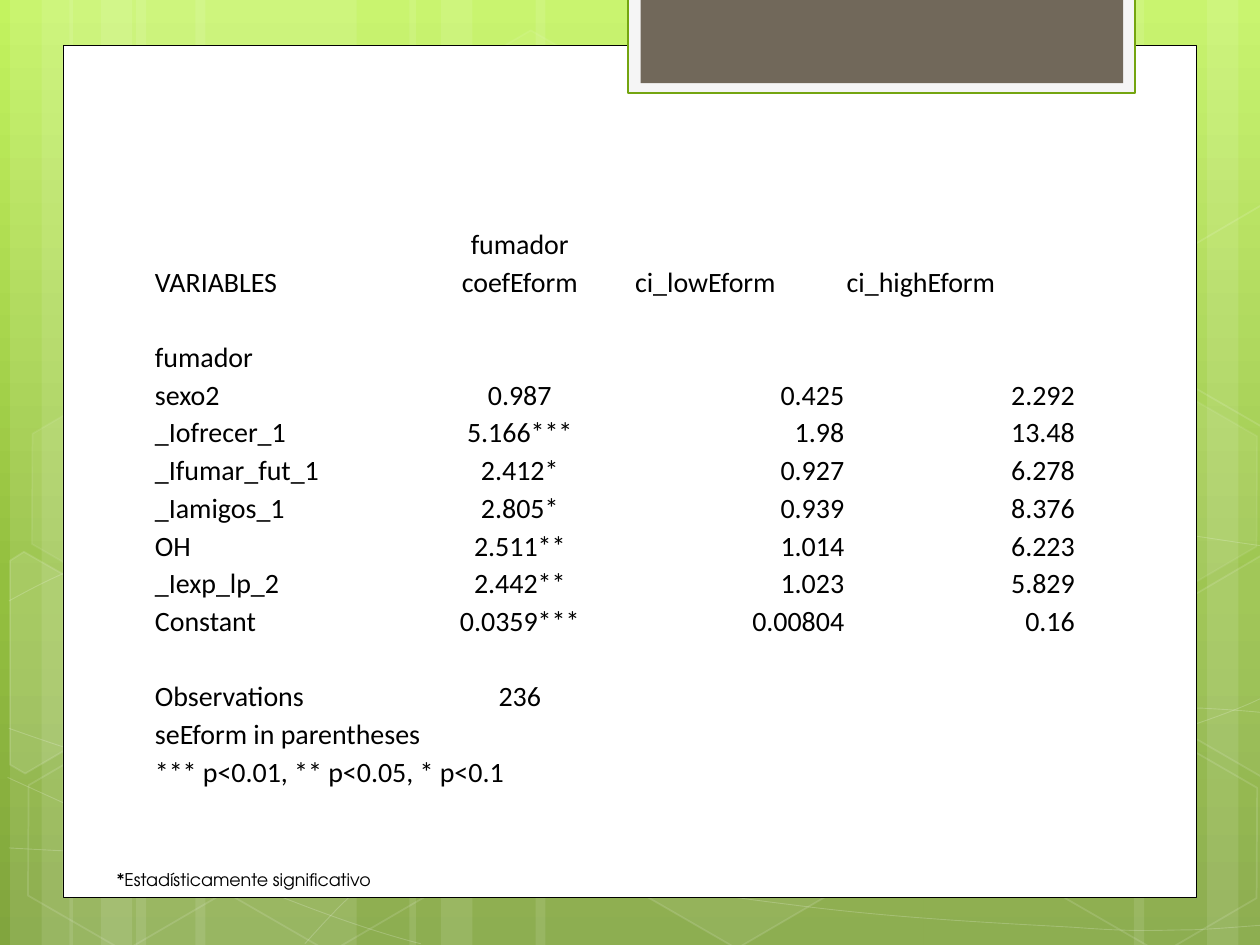
from copy import deepcopy

from lxml import etree
from pptx import Presentation
from pptx.dml.color import RGBColor
from pptx.enum.shapes import MSO_SHAPE
from pptx.enum.text import MSO_ANCHOR, MSO_AUTO_SIZE, PP_ALIGN
from pptx.oxml.ns import qn
from pptx.util import Inches, Pt

RECT, HEXAGON = MSO_SHAPE.RECTANGLE, MSO_SHAPE.HEXAGON
LEFT, CENTER, RIGHT = PP_ALIGN.LEFT, PP_ALIGN.CENTER, PP_ALIGN.RIGHT
BOTTOM, GROW = MSO_ANCHOR.BOTTOM, MSO_AUTO_SIZE.SHAPE_TO_FIT_TEXT

WHITE = RGBColor(0xFF, 0xFF, 0xFF)
BLACK = RGBColor(0x00, 0x00, 0x00)
PALE = RGBColor(0xF5, 0xF5, 0xF5)
GREEN = RGBColor(0x74, 0xA5, 0x10)
BROWN = RGBColor(0x71, 0x68, 0x5A)
BACKDROP = [(0, RGBColor(0xC3, 0xF3, 0x5F)), (0.62, RGBColor(0x93, 0xBF, 0x3F)),
            (1, RGBColor(0x81, 0xA5, 0x3E))]

SLIDE_W, SLIDE_H = Inches(10), Inches(7.5)
UNIT = SLIDE_W / 100
ROWS = 75

BANDS = [(10.8, 17.5), (0.8, 5), (3.3, 8.3), (15.5, 17.5), (5.5, 5), (8, 8.3),
         (73.3, 17.5), (95.8, 5), (90, 8.3), (42.5, 30.8), (32.5, 5), (35, 8.3)]
CURVES = [
    [(0.7, 67.3), (6.1, 67.6), (11.5, 67.9), (19, 67.8), (26.5, 67.7), (35.8, 67.5),
     (45.8, 66.5), (55.8, 65.5), (70, 63.6), (79.2, 61.7), (88.3, 59.8), (97.7, 56.8),
     (100.7, 55.1)],
    [(0.7, 47.7), (3.6, 46.1), (6.5, 44.6), (12.1, 43.1), (17.8, 41.6), (25.9, 39.4),
     (34.7, 38.7), (43.6, 38), (54.4, 37.9), (65.4, 38.7), (76.4, 39.5), (94.7, 42.6),
     (100.7, 43.4)],
    [(0.6, 61.7), (12.7, 67.2), (24.7, 72.7), (33.4, 74.9)],
    [(0.7, 57.8), (3.8, 58.9), (7, 60), (12.8, 61.6), (18.6, 63.1), (27.3, 65.6),
     (35.7, 67.3), (44, 69), (54.5, 70.8), (62.8, 71.8), (71.1, 72.9), (80, 73.3),
     (85.3, 73.6), (90.5, 74), (91.9, 73.8), (94.5, 73.8), (97.1, 73.7), (98.9, 73.5),
     (100.7, 73.4)],
    [(24.2, 74.9), (26, 72.9), (27.8, 70.9), (30.2, 69.1), (32.6, 67.3), (36, 65.3),
     (38.8, 63.9), (41.6, 62.5), (43.3, 61.9), (47, 60.9), (50.6, 59.9), (57.3, 58.5),
     (60.8, 57.8), (64.4, 57.1), (64.9, 57.1), (68, 56.9), (71.1, 56.6), (76, 56.3),
     (79.4, 56.2), (82.9, 56.1), (88.6, 56.2), (88.6, 56.2), (91, 56.2), (93, 56.2),
     (95.3, 56.2), (97.1, 56.3), (98.8, 56.4), (100.6, 56.6)],
]
HEXAGONS = [(33.4, 3.6, 4, 8), (49.7, 58.9, 6, 12), (1.1, 59.1, 0, 12), (1.4, 31.2, 7, 8),
            (17.4, 59.2, 0, 12), (75.3, 45.3, 10, 12), (83.4, 59.3, 0, 12),
            (83.4, 31.4, 7, 8)]
CUT_HEXAGONS = [
    ([(0.8, 44.5), (1.9, 43.8), (9.6, 48.2), (9.5, 57), (2, 61.4), (0.8, 60.7)], 10),
    ([(92.6, 48.5), (100.1, 44.1), (100.9, 44.6), (100.9, 61.3), (100.2, 61.7),
      (92.6, 57.3)], 4),
    ([(92.6, 20.7), (100.1, 16.3), (101, 16.8), (100.9, 33.5), (100.2, 33.9),
      (92.6, 29.5)], 0),
]

COLUMN_WIDTHS = [20, 18.1, 16.8, 18.3]
COLUMN_ALIGN = [LEFT, CENTER, RIGHT, RIGHT]
HEADER_ROW = 1
RESULTS = [
    ["", "fumador"],
    ["VARIABLES", "coefEform", "ci_lowEform", "ci_highEform"],
    [],
    ["fumador"],
    ["sexo2", "0.987", "0.425", "2.292"],
    ["_Iofrecer_1", "5.166***", "1.98", "13.48"],
    ["_Ifumar_fut_1", "2.412*", "0.927", "6.278"],
    ["_Iamigos_1", "2.805*", "0.939", "8.376"],
    ["OH", "2.511**", "1.014", "6.223"],
    ["_Iexp_lp_2", "2.442**", "1.023", "5.829"],
    ["Constant", "0.0359***", "0.00804", "0.16"],
    [],
    ["Observations", "236"],
    ["seEform in parentheses"],
    ["*** p<0.01, ** p<0.05, * p<0.1"],
]
NOTE_ROWS = (13, 14)


def units(*values):
    """Turn grid columns or rows into slide lengths."""
    return [round(v * UNIT) for v in values]


def set_attrs(obj, values):
    """Set each attribute named in a dict."""
    for name, value in values.items():
        setattr(obj, name, value)


def paint(fill, color, opacity=100):
    """Give a fill a solid colour, or none at zero opacity."""
    if not opacity:
        fill.background()
        return
    fill.solid()
    fill.fore_color.rgb = color


def style(sp, fill=WHITE, fill_opacity=100, line=None, width=1, line_opacity=100):
    """Set the fill, outline and opacity of a shape."""
    sp.shadow.inherit = False
    paint(sp.fill, fill, fill_opacity)
    paint(sp.line.fill, line, line_opacity if line is not None else 0)
    if line is not None:
        sp.line.width = Pt(width)
    for where, opacity in (("p:spPr/a:solidFill", fill_opacity),
                           ("p:spPr/a:ln/a:solidFill", line_opacity)):
        for color in sp.element.xpath(where + "/a:srgbClr"):
            if opacity < 100:
                etree.SubElement(color, qn("a:alpha"), val=str(opacity * 1000))


def add_preset(s, kind, box, **look):
    """Add a styled preset shape."""
    sp = s.shapes.add_shape(kind, *units(*box))
    style(sp, **look)
    return sp


def add_outline(s, points, close, **look):
    """Add a styled freeform through the given points."""
    start, *rest = [units(*point) for point in points]
    builder = s.shapes.build_freeform(*start)
    builder.add_line_segments(rest, close=close)
    sp = builder.convert_to_shape()
    style(sp, **look)
    return sp


def add_curve(s, knots, **look):
    """Add an open chain of cubic Bézier segments."""
    sp = add_outline(s, knots, False, **look)
    lines = sp.element.xpath(".//a:path/a:lnTo")
    for i in range(0, len(lines), 3):
        bend = etree.SubElement(lines[i].getparent(), qn("a:cubicBezTo"))
        for line in lines[i:i + 3]:
            bend.append(line[0])
            line.getparent().remove(line)


def add_backdrop(s):
    """Fill the background and add its bands, curves and hexagons."""
    fill = s.background.fill
    fill.gradient()
    fill.gradient_angle = 270
    stops = s.element.xpath(".//a:gsLst")[0]
    stops.append(deepcopy(stops[0]))
    for stop, (position, color) in zip(fill.gradient_stops, BACKDROP):
        stop.position, stop.color.rgb = position, color
    for x, w in BANDS:
        add_preset(s, RECT, (x, 0, w, ROWS), fill_opacity=10)
    for knots in CURVES:
        add_curve(s, knots, fill_opacity=0, line=WHITE, width=0.5, line_opacity=20)
    for x, y, opacity, line_opacity in HEXAGONS:
        sp = add_preset(s, HEXAGON, (x, y, 17.5, 15.2), fill_opacity=opacity,
                        line=WHITE, line_opacity=line_opacity)
        sp.rotation = 30
        sp.adjustments[0], sp.adjustments[1] = 0.285, 1.155
    for points, opacity in CUT_HEXAGONS:
        add_outline(s, points, True, fill_opacity=opacity, line=WHITE, line_opacity=12)


def write(p, text, font, size):
    """Write one run of black text, or size an empty paragraph."""
    if text:
        r = p.add_run()
        r.text = text
        set_attrs(r.font, {"name": font, "size": Pt(size)})
        r.font.color.rgb = BLACK
    else:
        etree.SubElement(p._p, qn("a:endParaRPr"), sz=str(size * 100))


def add_results(s):
    """Add the regression table."""
    frame = s.shapes.add_table(len(RESULTS), len(COLUMN_WIDTHS),
                               *units(12.2, 17.8, sum(COLUMN_WIDTHS), 44.9))
    table = frame.table
    set_attrs(table, {"first_row": False, "horz_banding": False})
    for column, width in zip(table.columns, units(*COLUMN_WIDTHS)):
        column.width = width
    inset = Inches(0.01)
    for i, texts in enumerate(RESULTS):
        for j, align in enumerate(COLUMN_ALIGN):
            cell = table.cell(i, j)
            cell.fill.background()
            set_attrs(cell, {"margin_left": inset, "margin_right": inset, "margin_top": inset,
                             "margin_bottom": 0, "vertical_anchor": BOTTOM})
            p = cell.text_frame.paragraphs[0]
            p.alignment = LEFT if i == HEADER_ROW and align == RIGHT else align
            write(p, texts[j] if j < len(texts) else "", "Calibri", 16)
    for i in NOTE_ROWS:
        table.cell(i, 0).merge(table.cell(i, 1))


def add_footnote(s):
    """Add the significance note under the table."""
    tf = s.shapes.add_textbox(*units(8.3, 68.5, 22.6, 2.7)).text_frame
    set_attrs(tf, {"word_wrap": False, "auto_size": GROW})
    write(tf.paragraphs[0], "*Estadísticamente significativo", "TeX Gyre Adventor", 10)


def main():
    """Build the slide and save it."""
    prs = Presentation()
    set_attrs(prs, {"slide_width": SLIDE_W, "slide_height": SLIDE_H})
    s = prs.slides.add_slide(prs.slide_layouts[6])
    add_backdrop(s)
    add_preset(s, RECT, (5, 3.6, 90, 67.65), line=BLACK, width=0.5)
    add_preset(s, RECT, (49.85, -0.2, 40.25, 7.6), fill=PALE, line=GREEN, width=1.25)
    add_preset(s, RECT, (50.85, -0.2, 38.3, 6.8), fill=BROWN)
    add_footnote(s)
    add_results(s)
    prs.save("out.pptx")


if __name__ == "__main__":
    main()
